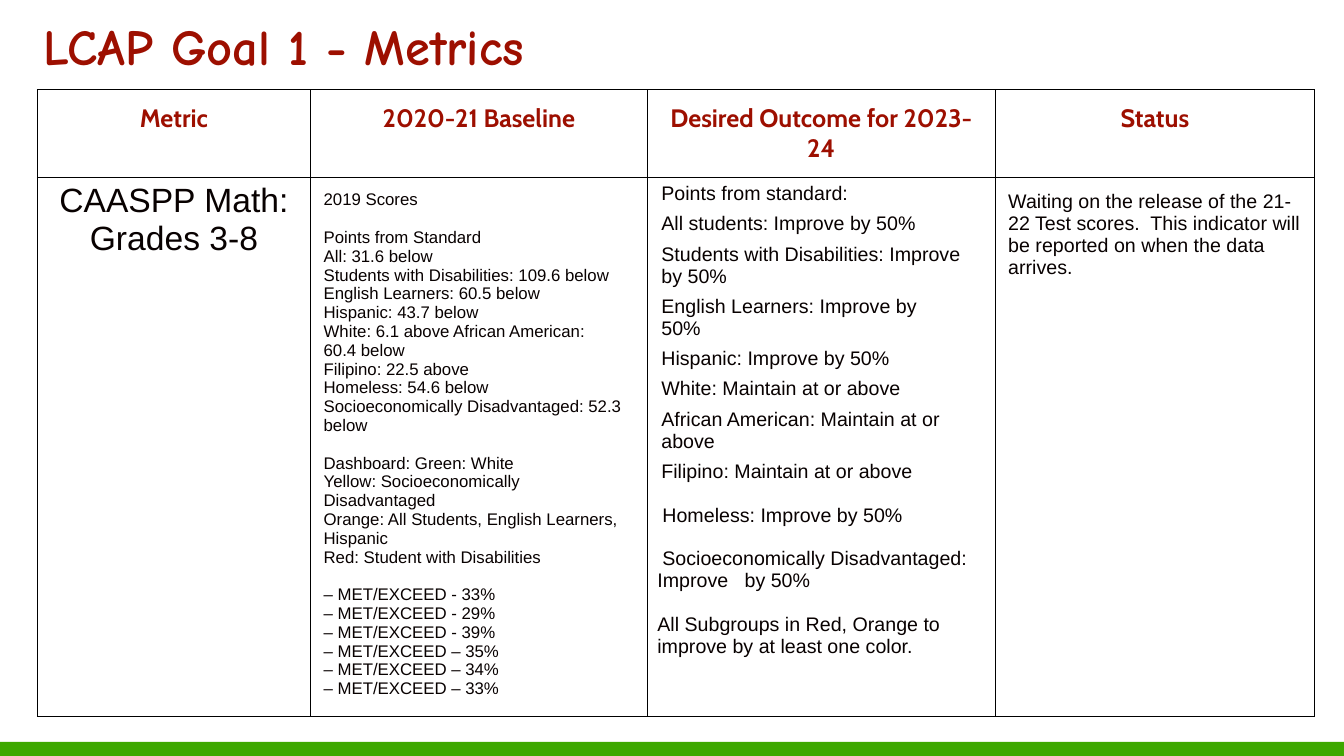
"""Build the LCAP Goal 1 metrics slide."""
from dataclasses import dataclass

import lxml.etree
import pptx
import pptx.dml.color
import pptx.enum.shapes
import pptx.enum.text
import pptx.oxml.ns
import pptx.util

Inches = pptx.util.Inches
Align = pptx.enum.text.PP_ALIGN


@dataclass(frozen=True)
class Theme:
    red: str = "9D0F00"
    ink: str = "080100"
    green: str = "3DA800"
    rule: str = "000000"
    title_font: str = "Comic Neue"
    head_font: str = "Cabin"
    body_font: str = "Arial"
    title: float = 36
    head: float = 18
    label: float = 24
    small: float = 12
    body: float = 14
    edge: float = 0.75


THEME = Theme()


@dataclass(frozen=True)
class Style:
    font: str
    size: float
    color: str
    bold: bool = False
    align: Align = Align.LEFT


@dataclass(frozen=True)
class Line:
    text: str
    above: float = 0
    left: float = 0
    first: float = 0
    right: float = 0


@dataclass(frozen=True)
class Entry:
    lines: list[Line]
    style: Style
    side: float = 0.13
    top: float = 0.13


TITLE = Style(THEME.title_font, THEME.title, THEME.red, True)
HEAD = Style(THEME.head_font, THEME.head, THEME.red, True, Align.CENTER)
LABEL = Style(THEME.body_font, THEME.label, THEME.ink, align=Align.CENTER)
SMALL = Style(THEME.body_font, THEME.small, THEME.ink)
BODY = Style(THEME.body_font, THEME.body, THEME.ink)

WIDTHS = [2.71, 3.34, 3.45, 3.17]
HEIGHTS = [0.87, 5.35]
HEADS = ["Metric", "2020-21 Baseline", "Desired Outcome for 2023-24", "Status"]
SCORES = [
    ["2019 Scores"],
    ["Points from Standard", "All: 31.6 below",
     "Students with Disabilities: 109.6 below", "English Learners: 60.5 below",
     "Hispanic: 43.7 below", "White: 6.1 above African American:",
     "60.4 below", "Filipino: 22.5 above", "Homeless: 54.6 below",
     "Socioeconomically Disadvantaged: 52.3 below"],
    ["Dashboard: Green: White", "Yellow: Socioeconomically Disadvantaged",
     "Orange: All Students, English Learners, Hispanic",
     "Red: Student with Disabilities"],
    ["– MET/EXCEED - 33%", "– MET/EXCEED - 29%", "– MET/EXCEED - 39%",
     "– MET/EXCEED – 35%", "– MET/EXCEED – 34%", "– MET/EXCEED – 33%"],
]
GOALS = [
    Line("Points from standard:", 2.6, 0.04),
    Line("All students: Improve by 50%", 6, 0.04),
    Line("Students with Disabilities: Improve by 50%", 6.2, 0.04, right=0.2),
    Line("English Learners: Improve by 50%", 5.9, 0.04, right=0.4),
    Line("Hispanic: Improve by 50%", 5.8, 0.04),
    Line("White: Maintain at or above", 5.7, 0.04),
    Line("African American: Maintain at or above", 5.8, 0.04),
    Line("Filipino: Maintain at or above", 5.7, 0.04),
    Line("Homeless: Improve by 50%", 15.6, first=0.05),
    Line("Socioeconomically Disadvantaged: Improve   by 50%", 15.6, first=0.05),
    Line("All Subgroups in Red, Orange to improve by at least one color.", 15.6),
]
STATUS = ("Waiting on the release of the 21-22 Test scores.  This indicator "
          "will be reported on when the data arrives.")


def tint(code: str) -> pptx.dml.color.RGBColor:
    """Turn a hex code into a colour."""
    return pptx.dml.color.RGBColor.from_string(code)


def group(blocks: list[list[str]], gap: float) -> list[Line]:
    """Join blocks of text with a gap above each later block."""
    return [Line(text, gap if block and not row else 0)
            for block, texts in enumerate(blocks)
            for row, text in enumerate(texts)]


def write(frame: pptx.text.text.TextFrame, lines: list[Line], style: Style) -> None:
    """Fill a text frame with styled lines."""
    frame.text = "\n".join(line.text for line in lines)
    frame.word_wrap = True
    for para, line in zip(frame.paragraphs, lines):
        para.alignment = style.align
        para.space_before = pptx.util.Pt(line.above)
        props = para._p.get_or_add_pPr()
        for key, size in (("marL", line.left), ("marR", line.right),
                          ("indent", line.first)):
            props.set(key, str(Inches(size)))
        for run in para.runs:
            run.font.name = style.font
            run.font.size = pptx.util.Pt(style.size)
            run.font.bold = style.bold
            run.font.color.rgb = tint(style.color)


def frame_cell(cell: pptx.table._Cell) -> None:
    """Draw thin rules on all sides of a cell."""
    props = cell._tc.get_or_add_tcPr()
    name = pptx.oxml.ns.qn
    for side in ("lnL", "lnR", "lnT", "lnB"):
        edge = lxml.etree.SubElement(props, name(f"a:{side}"),
                                     w=str(pptx.util.Pt(THEME.edge)))
        fill = lxml.etree.SubElement(edge, name("a:solidFill"))
        lxml.etree.SubElement(fill, name("a:srgbClr"), val=THEME.rule)
    cell.fill.background()


def draw_cell(cell: pptx.table._Cell, entry: Entry) -> None:
    """Place one entry in its cell."""
    frame_cell(cell)
    cell.margin_left = cell.margin_right = Inches(entry.side)
    cell.margin_top = cell.margin_bottom = Inches(entry.top)
    cell.vertical_anchor = pptx.enum.text.MSO_ANCHOR.TOP
    write(cell.text_frame, entry.lines, entry.style)


def draw_table(slide: pptx.slide.Slide, rows: list[list[Entry]]) -> None:
    """Draw the table of metrics."""
    table = slide.shapes.add_table(
        len(HEIGHTS), len(WIDTHS), Inches(0.37), Inches(0.89),
        Inches(sum(WIDTHS)), Inches(sum(HEIGHTS))).table
    table.first_row = table.horz_banding = False
    for column, width in zip(table.columns, WIDTHS):
        column.width = Inches(width)
    for row, height, items in zip(table.rows, HEIGHTS, rows):
        row.height = Inches(height)
        for cell, entry in zip(row.cells, items):
            draw_cell(cell, entry)


def draw_title(slide: pptx.slide.Slide) -> None:
    """Place and style the title."""
    title = slide.shapes.title
    title.left, title.top = Inches(0.3), Inches(0.1)
    title.width, title.height = Inches(12.42), Inches(0.78)
    frame = title.text_frame
    frame.margin_left = frame.margin_right = Inches(0.13)
    frame.margin_top = frame.margin_bottom = Inches(0.13)
    frame.vertical_anchor = pptx.enum.text.MSO_ANCHOR.MIDDLE
    write(frame, [Line("LCAP Goal 1 - Metrics")], TITLE)
    frame.paragraphs[0].line_spacing = 0.9


def main() -> None:
    """Build and save the deck."""
    deck = pptx.Presentation()
    deck.slide_width, deck.slide_height = Inches(13.33), Inches(7.5)
    slide = deck.slides.add_slide(deck.slide_layouts[5])
    bar = slide.shapes.add_shape(
        pptx.enum.shapes.MSO_SHAPE.RECTANGLE, 0, Inches(7.36),
        Inches(13.33), Inches(0.14))
    bar.shadow.inherit = False
    bar.fill.solid()
    bar.fill.fore_color.rgb = tint(THEME.green)
    bar.line.fill.background()
    draw_title(slide)
    label = [Line("CAASPP Math:"), Line("Grades 3-8")]
    draw_table(slide, [
        [Entry([Line(text)], HEAD) for text in HEADS],
        [Entry(label, LABEL, 0.1, 0.05), Entry(group(SCORES, 13.4), SMALL),
         Entry(GOALS, BODY, 0.1, 0.05), Entry([Line(STATUS)], BODY)],
    ])
    deck.save("out.pptx")


if __name__ == "__main__":
    main()
